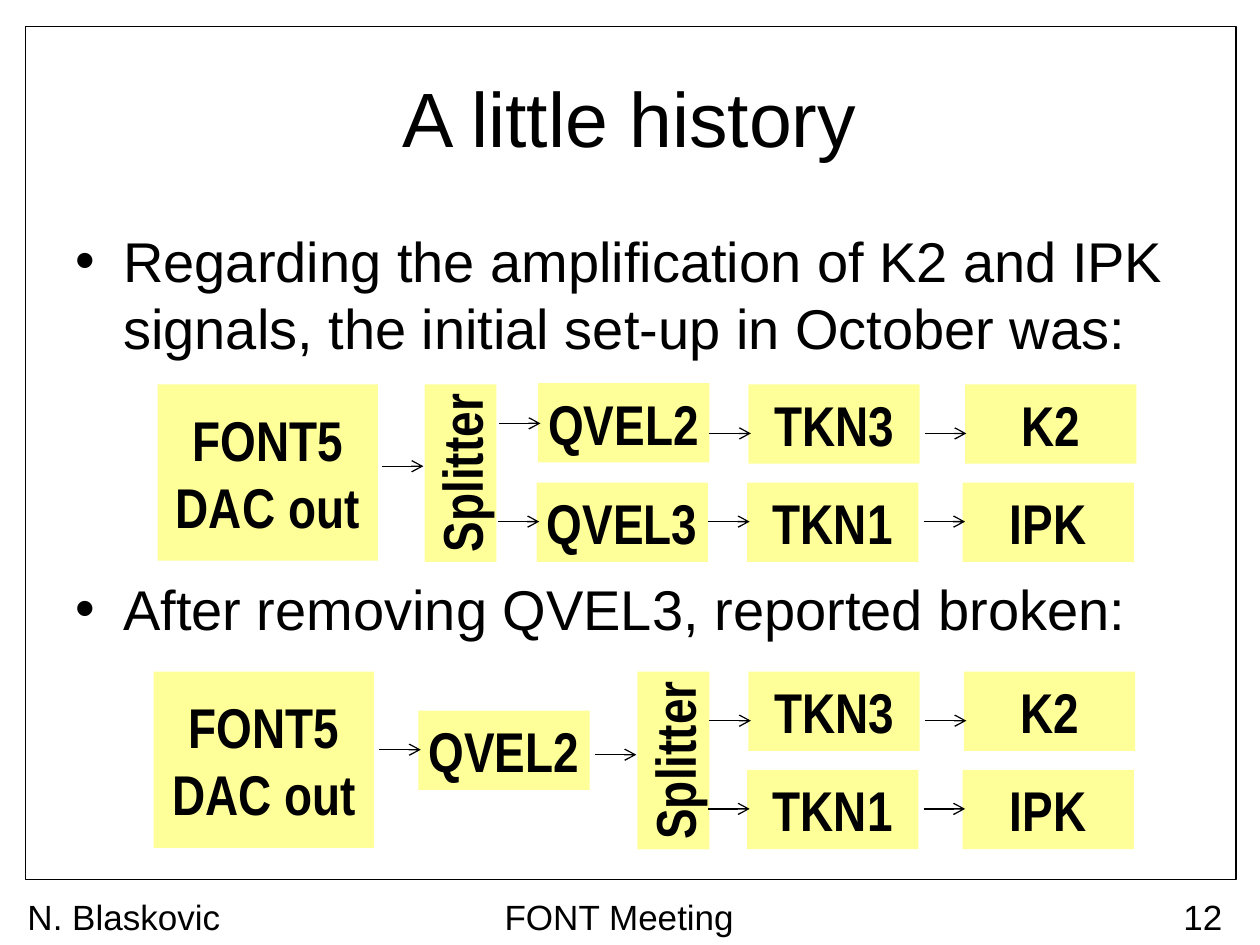
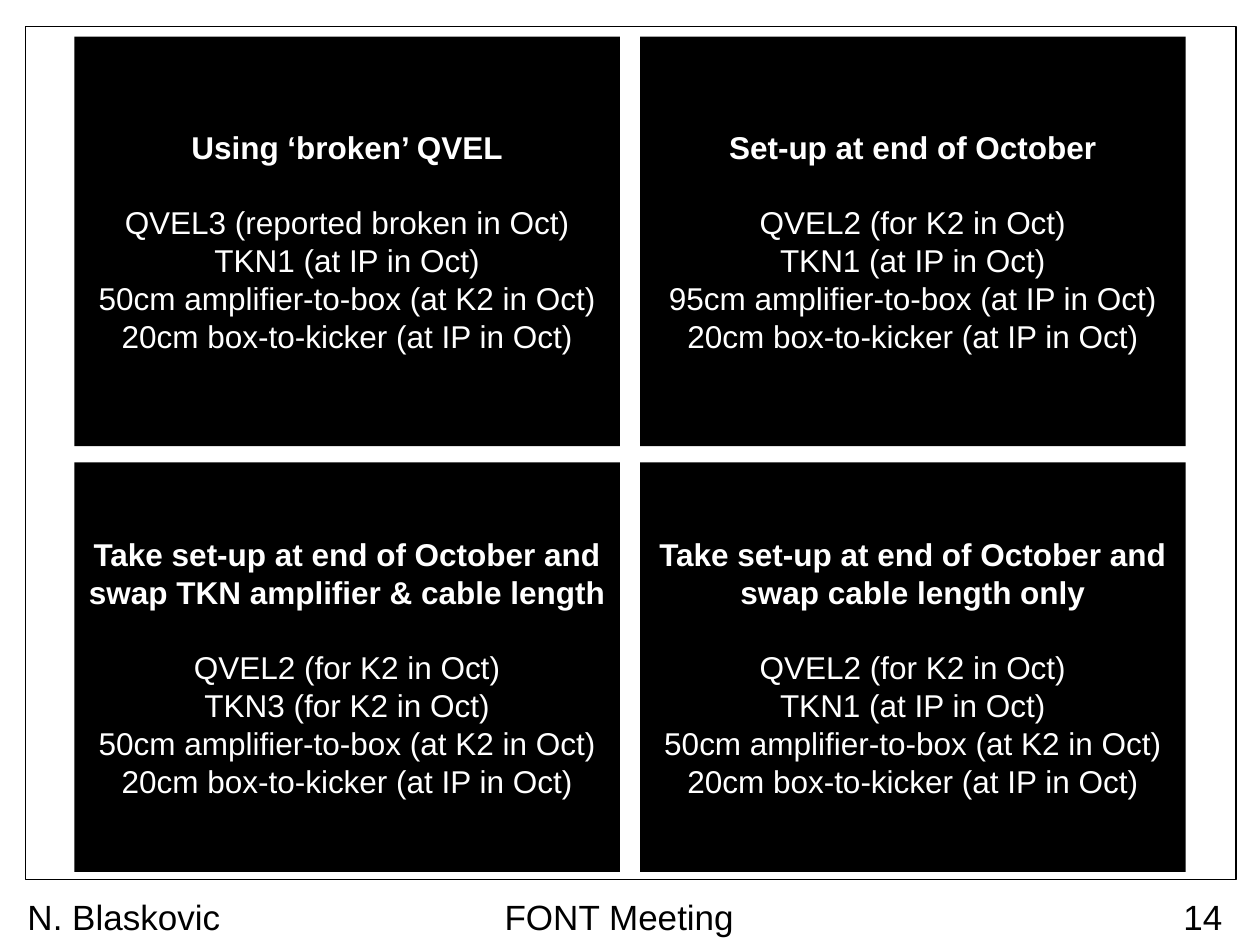
from lxml import etree
from pptx import Presentation
from pptx.dml.color import RGBColor
from pptx.enum.shapes import MSO_CONNECTOR, MSO_SHAPE
from pptx.enum.text import MSO_ANCHOR, PP_ALIGN
from pptx.oxml.ns import qn
from pptx.util import Inches, Pt

RECTANGLE = MSO_SHAPE.RECTANGLE
STRAIGHT = MSO_CONNECTOR.STRAIGHT
MIDDLE, TOP = MSO_ANCHOR.MIDDLE, MSO_ANCHOR.TOP
LEFT, CENTER, RIGHT = PP_ALIGN.LEFT, PP_ALIGN.CENTER, PP_ALIGN.RIGHT

COLORS = {"ink": "000000", "stage": "FFFF99", "panel": "000000", "panel_text": "FFFFFF"}
BODY_FONT, STAGE_FONT = "Arial", "Arial Narrow"
STAGE_SIZE = (1.36, 0.63)
SOURCE_SIZE = (1.75, 1.4)
SPLITTER_SIZE = (1.41, 0.57)
ARROW_LENGTH = 0.33

BULLETS = [
    "Regarding the amplification of K2 and IPK signals, the initial set-up in October was:",
    "After removing QVEL3, reported broken:",
]

INITIAL_CHAIN = {
    "source": (1.25, 3.05),
    "splitter": (2.95, 3.47),
    "stages": [
        ("QVEL2", 4.27, 3.04), ("TKN3", 5.94, 3.05), ("K2", 7.66, 3.05),
        ("QVEL3", 4.26, 3.83), ("TKN1", 5.93, 3.83), ("IPK", 7.64, 3.83),
    ],
    "arrow_tips": [
        (3.36, 3.7), (4.29, 3.36), (5.96, 3.44), (7.67, 3.44),
        (4.28, 4.14), (5.95, 4.14), (7.66, 4.14),
    ],
}
REDUCED_CHAIN = {
    "source": (1.22, 5.33),
    "splitter": (4.64, 5.75),
    "stages": [
        ("QVEL2", 3.32, 5.64), ("TKN3", 5.94, 5.33), ("K2", 7.65, 5.33),
        ("TKN1", 5.93, 6.11), ("IPK", 7.64, 6.11),
    ],
    "arrow_tips": [
        (3.34, 5.95), (5.05, 5.99), (5.96, 5.72), (7.67, 5.72),
        (5.95, 6.42), (7.66, 6.42),
    ],
}

IP_KICKER_CABLE = "20cm box-to-kicker (at IP in Oct)"
K2_BOX_CABLE = "50cm amplifier-to-box (at K2 in Oct)"
K2_QVEL = "QVEL2 (for K2 in Oct)"
IP_TKN = "TKN1 (at IP in Oct)"
SETUPS = [
    ("Using ‘broken’ QVEL",
     ["QVEL3 (reported broken in Oct)", IP_TKN, K2_BOX_CABLE]),
    ("Set-up at end of October",
     [K2_QVEL, IP_TKN, "95cm amplifier-to-box (at IP in Oct)"]),
    ("Take set-up at end of October and swap TKN amplifier & cable length",
     [K2_QVEL, "TKN3 (for K2 in Oct)", K2_BOX_CABLE]),
    ("Take set-up at end of October and swap cable length only",
     [K2_QVEL, IP_TKN, K2_BOX_CABLE]),
]


def color(name):
    """Return the named palette colour."""
    return RGBColor.from_string(COLORS[name])


def place(left, top, width, height):
    """Convert a box given in inches to lengths."""
    return [Inches(value) for value in (left, top, width, height)]


def style(paragraph, size, font=BODY_FONT, ink="ink", bold=False, align=LEFT):
    """Set the alignment and font of a paragraph."""
    paragraph.alignment = align
    paragraph.font.size = Pt(size)
    paragraph.font.name = font
    paragraph.font.bold = bold
    paragraph.font.color.rgb = color(ink)


def write(frame, lines, **look):
    """Fill a text frame with one equally styled paragraph per line."""
    frame.text = "\n".join(lines)
    for paragraph in frame.paragraphs:
        style(paragraph, **look)


def add_text(slide, text, box, size, align, anchor=TOP):
    """Add a wrapping text box with a single paragraph."""
    frame = slide.shapes.add_textbox(*place(*box)).text_frame
    frame.word_wrap = True
    frame.vertical_anchor = anchor
    write(frame, [text], size=size, align=align)


def add_box(slide, box, fill):
    """Add a plain filled rectangle without outline."""
    rectangle = slide.shapes.add_shape(RECTANGLE, *place(*box))
    rectangle.shadow.inherit = False
    rectangle.fill.solid()
    rectangle.fill.fore_color.rgb = color(fill)
    rectangle.line.fill.background()
    rectangle.text_frame.vertical_anchor = MIDDLE
    return rectangle


def add_stage(slide, lines, position, size=STAGE_SIZE, rotation=0):
    """Add a labelled block of the signal chain."""
    stage = add_box(slide, (*position, *size), "stage")
    stage.rotation = rotation
    stage.text_frame.word_wrap = False
    write(stage.text_frame, lines, size=32, font=STAGE_FONT, bold=True, align=CENTER)


def add_arrow(slide, tip, y):
    """Add a short arrow pointing right to its tip."""
    arrow = slide.shapes.add_connector(
        STRAIGHT, Inches(tip - ARROW_LENGTH), Inches(y), Inches(tip), Inches(y))
    arrow.line.color.rgb = color("ink")
    arrow.line.width = Pt(0.75)
    etree.SubElement(arrow.line._get_or_add_ln(), qn("a:tailEnd"), type="arrow")
    etree.SubElement(arrow._element.spPr, qn("a:effectLst"))


def add_chain(slide, chain):
    """Draw a signal chain from the DAC output to the kickers."""
    add_stage(slide, ["FONT5", "DAC out"], chain["source"], SOURCE_SIZE)
    add_stage(slide, ["Splitter"], chain["splitter"], SPLITTER_SIZE, 270)
    for label, left, top in chain["stages"]:
        add_stage(slide, [label], (left, top))
    for tip, y in chain["arrow_tips"]:
        add_arrow(slide, tip, y)


def add_bullets(slide, bullets):
    """Add the bulleted body, leaving room for a chain between bullets."""
    frame = slide.shapes.add_textbox(*place(0.5, 1.75, 9, 4.95)).text_frame
    frame.word_wrap = True
    frame.text = "\n".join(bullets)
    for index, paragraph in enumerate(frame.paragraphs):
        properties = paragraph._p.get_or_add_pPr()
        properties.set("marL", str(Inches(0.38)))
        properties.set("indent", str(-Inches(0.38)))
        paragraph.space_before = Pt(122 if index else 0)
        etree.SubElement(properties, qn("a:buFont"), typeface=BODY_FONT)
        etree.SubElement(properties, qn("a:buChar"), char="•")
        style(paragraph, 32)


def add_setup(slide, heading, details, left, top):
    """Add a dark panel with a bold heading above its set-up details."""
    frame = add_box(slide, (left, top, 4.33, 3.25), "panel").text_frame
    frame.word_wrap = True
    frame.margin_left = frame.margin_right = Inches(0.05)
    write(frame, [heading, *details], size=18, ink="panel_text", align=CENTER)
    title = frame.paragraphs[0]
    title.font.bold = True
    title.space_after = Pt(21.5)


def add_slide(deck, number):
    """Add a blank slide with the shared border and footer."""
    slide = deck.slides.add_slide(deck.slide_layouts[6])
    border = slide.shapes.add_shape(RECTANGLE, *place(0.2, 0.21, 9.61, 6.77))
    border.shadow.inherit = False
    border.fill.background()
    border.line.color.rgb = color("ink")
    border.line.width = Pt(0.75)
    for text, left, width, align in (
        ("FONT Meeting", 1.53, 6.77, CENTER),
        (str(number), 9.25, 0.55, RIGHT),
        ("N. Blaskovic", 0.12, 1.73, LEFT),
    ):
        add_text(slide, text, (left, 7.06, width, 0.32), 20, align)
    return slide


def main():
    """Build and save the presentation."""
    deck = Presentation()
    deck.slide_width, deck.slide_height = Inches(10), Inches(7.5)

    history = add_slide(deck, 12)
    add_text(history, "A little history", (0.5, 0.3, 9, 1.25), 44, CENTER, MIDDLE)
    add_bullets(history, BULLETS)
    for chain in (INITIAL_CHAIN, REDUCED_CHAIN):
        add_chain(history, chain)

    comparison = add_slide(deck, 14)
    for index, (heading, details) in enumerate(SETUPS):
        row, column = divmod(index, 2)
        add_setup(comparison, heading, [*details, IP_KICKER_CABLE],
                  0.59 + 4.49 * column, 0.29 + 3.38 * row)

    deck.save("out.pptx")


if __name__ == "__main__":
    main()
